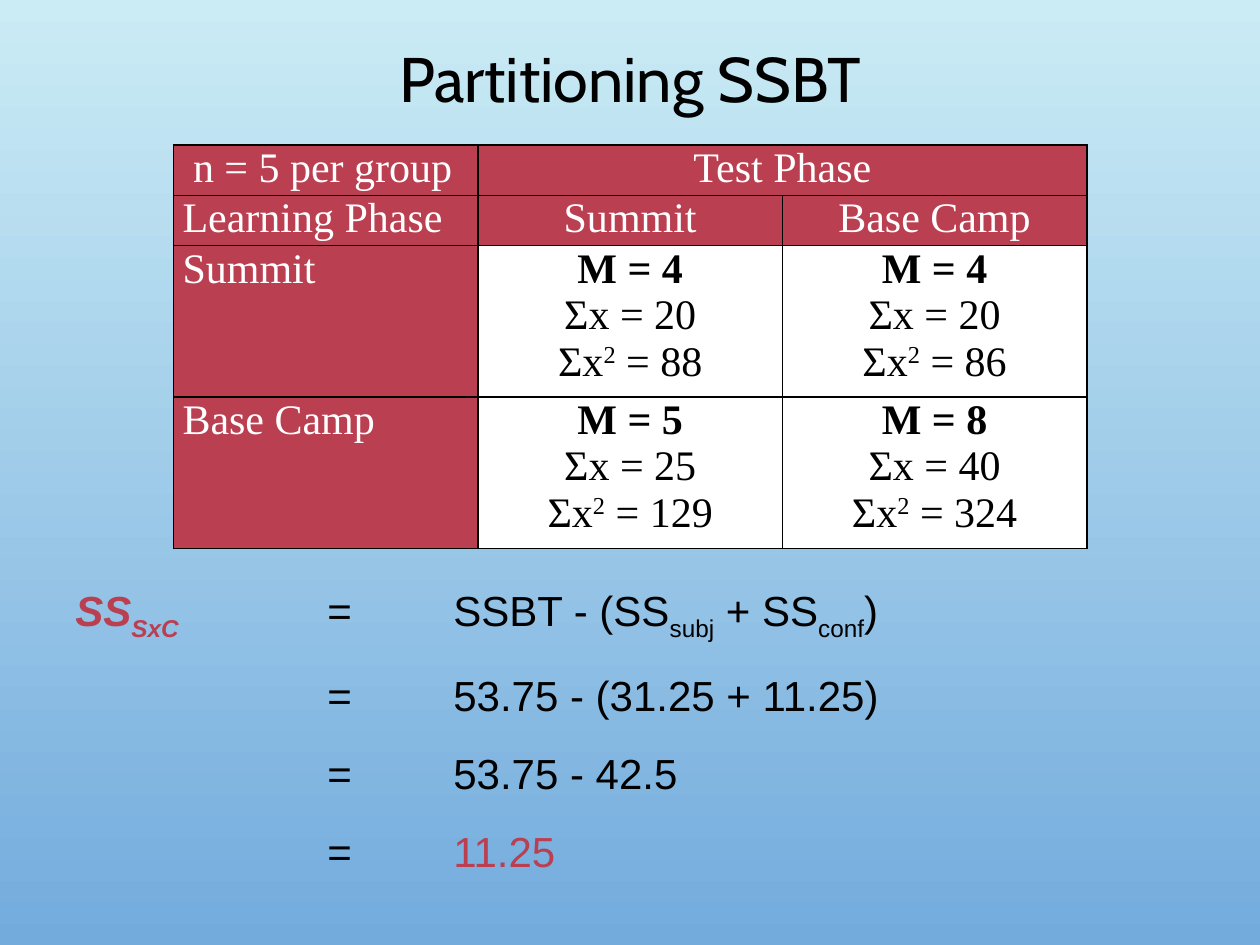
from dataclasses import dataclass

from lxml.etree import SubElement
from pptx import Presentation
from pptx.dml.color import RGBColor
from pptx.enum.text import MSO_ANCHOR, PP_ALIGN
from pptx.oxml.ns import qn
from pptx.util import Cm, Pt


@dataclass(frozen=True)
class Theme:
    sky_top: str = "CBECF5"
    sky_bottom: str = "73ABDD"
    accent: str = "BA3F51"
    ink: str = "000000"
    paper: str = "FFFFFF"
    title_font: str = "Cabin"
    table_font: str = "Times New Roman"
    body_font: str = "Arial"
    title_size: int = 36
    text_size: int = 24
    border_width: int = 1


THEME = Theme()
SUBSCRIPT = -25
SUPERSCRIPT = 30


def add_run(paragraph, text, *, font, color=THEME.ink, size=THEME.text_size,
            bold=False, italic=False, baseline=0):
    run = paragraph.add_run()
    run.text = text
    run.font.name = font
    run.font.size = Pt(size)
    run.font.bold = bold
    run.font.italic = italic
    run.font.color.rgb = RGBColor.from_string(color)
    if baseline:
        run.font._element.set("baseline", str(baseline * 1000))


def add_tab_stops(paragraph, stops):
    tab_list = SubElement(paragraph._p.get_or_add_pPr(), qn("a:tabLst"))
    for stop in stops:
        SubElement(tab_list, qn("a:tab"), pos=str(Cm(stop)), algn="l")


def fill_paragraphs(frame, lines, *, font, align=PP_ALIGN.LEFT, spacing=None, gap=0,
                    tab_stops=()):
    for index, pieces in enumerate(lines):
        paragraph = frame.add_paragraph() if index else frame.paragraphs[0]
        if tab_stops:
            add_tab_stops(paragraph, tab_stops)
        paragraph.alignment = align
        if spacing:
            paragraph.line_spacing = spacing
        paragraph.space_before = Pt(gap if index else 0)
        for text, look in pieces:
            add_run(paragraph, text, font=font, **look)


def add_sky(slide):
    sky = slide.background.fill
    sky.gradient()
    sky.gradient_angle = 270
    for stop, color in zip(sky.gradient_stops, (THEME.sky_top, THEME.sky_bottom)):
        stop.color.rgb = RGBColor.from_string(color)


def add_title(slide, left, top, width, height):
    frame = slide.shapes.add_textbox(Cm(left), Cm(top), Cm(width), Cm(height)).text_frame
    frame.word_wrap = True
    frame.vertical_anchor = MSO_ANCHOR.MIDDLE
    fill_paragraphs(frame, [[("Partitioning SSBT", {"size": THEME.title_size})]],
                    font=THEME.title_font, align=PP_ALIGN.CENTER, spacing=0.9)


def add_borders(cell):
    properties = cell._tc.get_or_add_tcPr()
    for side in ("a:lnL", "a:lnR", "a:lnT", "a:lnB"):
        line = SubElement(properties, qn(side), w=str(Pt(THEME.border_width)))
        solid = SubElement(line, qn("a:solidFill"))
        SubElement(solid, qn("a:srgbClr"), val=THEME.ink)


def format_cell(cell, lines, fill, align):
    cell.margin_left = cell.margin_right = Cm(0.18)
    cell.margin_top = cell.margin_bottom = 0
    add_borders(cell)
    cell.fill.solid()
    cell.fill.fore_color.rgb = RGBColor.from_string(fill)
    fill_paragraphs(cell.text_frame, lines, font=THEME.table_font, align=align)


def group_statistics(mean, total, squares):
    return [
        [(f"M = {mean}", {"bold": True})],
        [(f"Σx = {total}", {})],
        [("Σx", {}), ("2", {"baseline": SUPERSCRIPT}), (f" = {squares}", {})],
    ]


def add_group_table(slide, left, top, width, height):
    content = [
        [" n = 5 per group", "Test Phase", ""],
        ["Learning Phase", "Summit", "Base Camp"],
        ["Summit", (4, 20, 88), (4, 20, 86)],
        ["Base Camp", (5, 25, 129), (8, 40, 324)],
    ]
    minimum_heights = (0.64, 0, 0, 0)
    group_frame = slide.shapes.add_table(len(content), len(content[0]), Cm(left), Cm(top),
                                         Cm(width), Cm(height))
    table = group_frame.table
    table.first_row = table.horz_banding = False
    for column in table.columns:
        column.width = Cm(width / len(content[0]))
    for row, minimum in zip(table.rows, minimum_heights):
        row.height = Cm(minimum)
    group_frame.height = Cm(height)
    table.cell(0, 1).merge(table.cell(0, 2))
    for r, entries in enumerate(content):
        for c, entry in enumerate(entries):
            align = PP_ALIGN.CENTER if c else PP_ALIGN.LEFT
            if isinstance(entry, tuple):
                lines, fill = group_statistics(*entry), THEME.paper
            else:
                heading = [(entry, {"color": THEME.paper})] if entry else []
                lines, fill = [heading], THEME.accent
            format_cell(table.cell(r, c), lines, fill, align)


def add_calculation(slide, left, top, width, height):
    frame = slide.shapes.add_textbox(Cm(left), Cm(top), Cm(width), Cm(height)).text_frame
    frame.word_wrap = True
    term = {"color": THEME.accent, "bold": True, "italic": True}
    sub = {"baseline": SUBSCRIPT}
    steps = [
        [("SS", term), ("SxC", term | sub), ("\t\t=\tSSBT - (SS", {}), ("subj", sub),
         (" + SS", {}), ("conf", sub), (")", {})],
        [("\t\t=\t53.75 - (31.25 + 11.25)", {})],
        [("\t\t=\t53.75 - 42.5", {})],
        [("\t\t=\t", {}), ("11.25", {"color": THEME.accent})],
    ]
    fill_paragraphs(frame, steps, font=THEME.body_font, spacing=1.2, gap=10,
                    tab_stops=(2.54, 5.08, 7.62))


def main():
    deck = Presentation()
    deck.slide_width, deck.slide_height = Cm(25.4), Cm(19.05)
    slide = deck.slides.add_slide(deck.slide_layouts[6])
    add_sky(slide)
    add_title(slide, 1.27, 0.76, 22.86, 1.78)
    add_group_table(slide, 3.5, 2.92, 18.41, 8.13)
    add_calculation(slide, 1.27, 11.43, 22.86, 6.99)
    deck.save("out.pptx")


if __name__ == "__main__":
    main()
